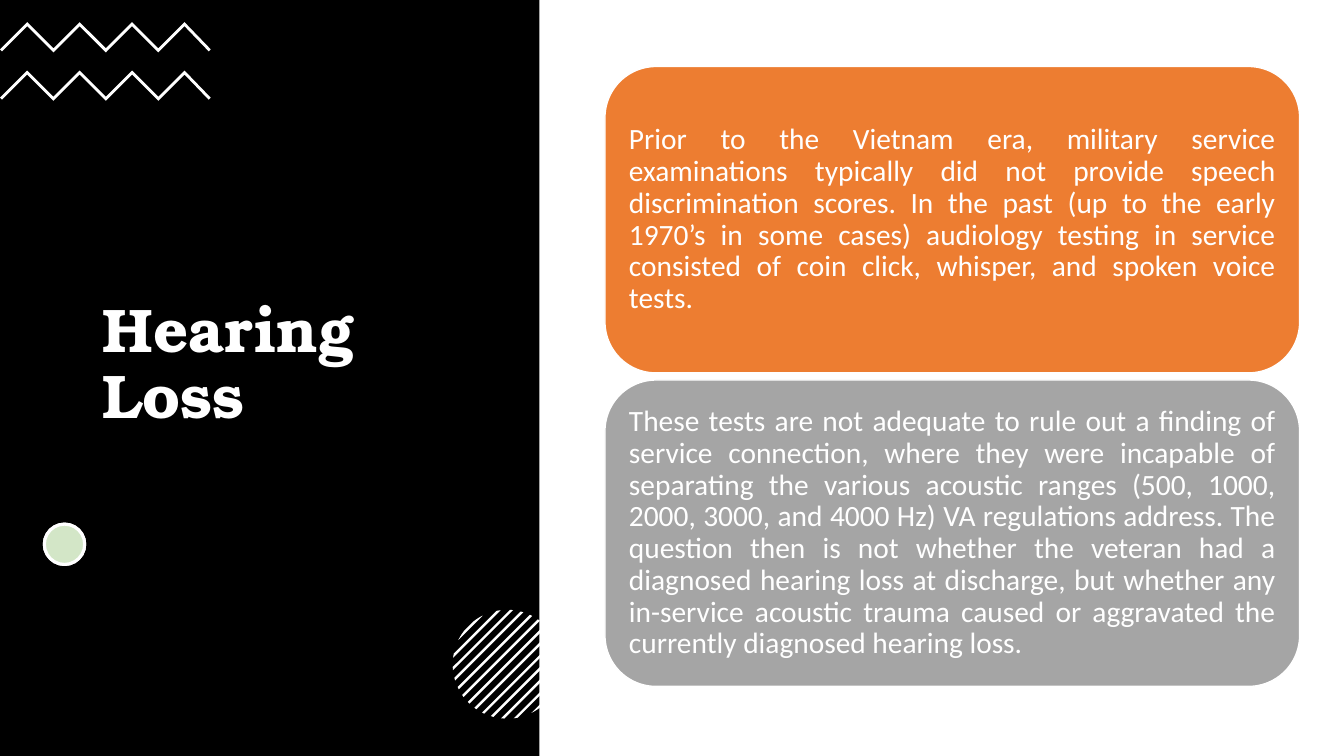
from dataclasses import dataclass
from math import sqrt

from lxml.etree import SubElement
from pptx import Presentation
from pptx.dml.color import RGBColor
from pptx.enum.shapes import MSO_SHAPE as Preset
from pptx.enum.text import MSO_ANCHOR as Anchor, PP_ALIGN as Align
from pptx.oxml.ns import qn
from pptx.shapes.autoshape import Shape
from pptx.slide import Slide
from pptx.text.text import TextFrame
from pptx.util import Inches, Pt

WHITE = RGBColor(0xFF, 0xFF, 0xFF)
BLACK = RGBColor(0x00, 0x00, 0x00)
ORANGE = RGBColor(0xED, 0x7D, 0x31)
GRAY = RGBColor(0xA5, 0xA5, 0xA5)
GREEN = RGBColor(0x70, 0xAD, 0x47)

Point = tuple[float, float]


@dataclass(frozen=True)
class Box:
    left: float
    top: float
    width: float
    height: float

    def lengths(self) -> tuple[Inches, Inches, Inches, Inches]:
        return Inches(self.left), Inches(self.top), Inches(self.width), Inches(self.height)


@dataclass(frozen=True)
class TextStyle:
    font: str
    size: float
    bold: bool
    align: Align


@dataclass(frozen=True)
class Card:
    color: RGBColor
    text: str


TITLE_STYLE = TextStyle("TeX Gyre Bonum", 44, True, Align.LEFT)
CARD_STYLE = TextStyle("Calibri", 21, False, Align.JUSTIFY)

PANEL = Box(0, 0, 5.35, 7.5)
TITLE = Box(0.92, 1.31, 3.5, 4.63)
DOT = Box(0.44, 5.2, 0.4, 0.4)
FIRST_CARD = Box(6, 0.66, 6.89, 3.04)
CARD_STEP = 3.11
CARD_INSET = 0.09

ZIGZAG_TOPS = (0.22, 0.7)
ZIGZAG_STEP = 0.26
ZIGZAG_THICKNESS = 0.04

DISC_CENTER = (5.03, 6.59)
DISC_RADIUS = 0.54
STRIPE_STEP = 0.12 / sqrt(2) * 1.03
STRIPE_WIDTH = 0.024

CARDS = (
    Card(
        ORANGE,
        "Prior to the Vietnam era, military service examinations typically did not "
        "provide speech discrimination scores. In the past (up to the early 1970’s in "
        "some cases) audiology testing in service consisted of coin click, whisper, and "
        "spoken voice tests.",
    ),
    Card(
        GRAY,
        "These tests are not adequate to rule out a finding of service connection, where "
        "they were incapable of separating the various acoustic ranges (500, 1000, 2000, "
        "3000, and 4000 Hz) VA regulations address. The question then is not whether the "
        "veteran had a diagnosed hearing loss at discharge, but whether any in-service "
        "acoustic trauma caused or aggravated the currently diagnosed hearing loss.",
    ),
)


def paint(shape: Shape, fill: RGBColor, line_width: float = 0) -> None:
    shape.shadow.inherit = False
    shape.fill.solid()
    shape.fill.fore_color.rgb = fill
    if line_width:
        shape.line.color.rgb = WHITE
        shape.line.width = Pt(line_width)
    else:
        shape.line.fill.background()


def add_preset(
    slide: Slide, preset: Preset, box: Box, fill: RGBColor, line_width: float = 0
) -> Shape:
    shape = slide.shapes.add_shape(preset, *box.lengths())
    paint(shape, fill, line_width)
    return shape


def add_outline(slide: Slide, points: list[Point]) -> None:
    corners = [(Inches(x), Inches(y)) for x, y in points]
    builder = slide.shapes.build_freeform(*corners[0])
    builder.add_line_segments(corners[1:], close=True)
    paint(builder.convert_to_shape(), WHITE)


def write_text(frame: TextFrame, text: str, style: TextStyle) -> None:
    frame.word_wrap = True
    frame.vertical_anchor = Anchor.MIDDLE
    paragraph = frame.paragraphs[0]
    paragraph.alignment = style.align
    paragraph.line_spacing = 0.9
    run = paragraph.add_run()
    run.text = text
    run.font.name = style.font
    run.font.size = Pt(style.size)
    run.font.bold = style.bold
    run.font.color.rgb = WHITE


def set_opacity(shape: Shape, percent: int) -> None:
    color = next(shape.fill._xPr.iter(qn("a:srgbClr")))
    SubElement(color, qn("a:alpha")).set("val", str(percent * 1000))


def zigzag_points(top: float) -> list[Point]:
    step = ZIGZAG_STEP
    upper = [(0.01 + step * i, top + (0 if i % 2 else step)) for i in range(9)]
    lower = [(x, y + ZIGZAG_THICKNESS) for x, y in upper[1:-1]]
    right_end = (upper[-1][0] - 0.02, top + 0.29)
    left_end = (0.02, top + 0.29)
    return [(0, top + 0.27), *upper[1:-1], (2.09, top + 0.27),
            right_end, *reversed(lower), left_end]


def stripe_points(index: int) -> list[Point]:
    center_x, center_y = DISC_CENTER
    upper_ends, lower_ends = [], []
    for part in range(5):
        distance = STRIPE_STEP * index + STRIPE_WIDTH * (part / 4 - 0.5)
        half_chord = sqrt(max(0, DISC_RADIUS**2 - distance**2))
        along, across = half_chord / sqrt(2), distance / sqrt(2)
        upper_ends.append((center_x + across + along, center_y + across - along))
        lower_ends.append((center_x + across - along, center_y + across + along))
    return upper_ends + lower_ends[::-1]


def add_card(slide: Slide, card: Card, box: Box) -> None:
    shape = add_preset(slide, Preset.ROUNDED_RECTANGLE, box, card.color, 1)
    frame = shape.text_frame
    frame.margin_left = frame.margin_right = Inches(CARD_INSET)
    frame.margin_top = frame.margin_bottom = Inches(CARD_INSET)
    write_text(frame, card.text, CARD_STYLE)


def main() -> None:
    presentation = Presentation()
    presentation.slide_width = Inches(13.33)
    presentation.slide_height = Inches(7.5)
    slide = presentation.slides.add_slide(presentation.slide_layouts[6])

    add_preset(slide, Preset.RECTANGLE, PANEL, BLACK)
    title = slide.shapes.add_textbox(*TITLE.lengths())
    write_text(title.text_frame, "Hearing Loss", TITLE_STYLE)

    for top in ZIGZAG_TOPS:
        add_outline(slide, zigzag_points(top))

    add_preset(slide, Preset.OVAL, DOT, WHITE, 2.25)
    set_opacity(add_preset(slide, Preset.OVAL, DOT, GREEN, 2.25), 30)

    for index in range(-6, 7):
        add_outline(slide, stripe_points(index))

    for row, card in enumerate(CARDS):
        top = FIRST_CARD.top + CARD_STEP * row
        add_card(slide, card, Box(FIRST_CARD.left, top, FIRST_CARD.width, FIRST_CARD.height))

    presentation.save("out.pptx")


if __name__ == "__main__":
    main()
